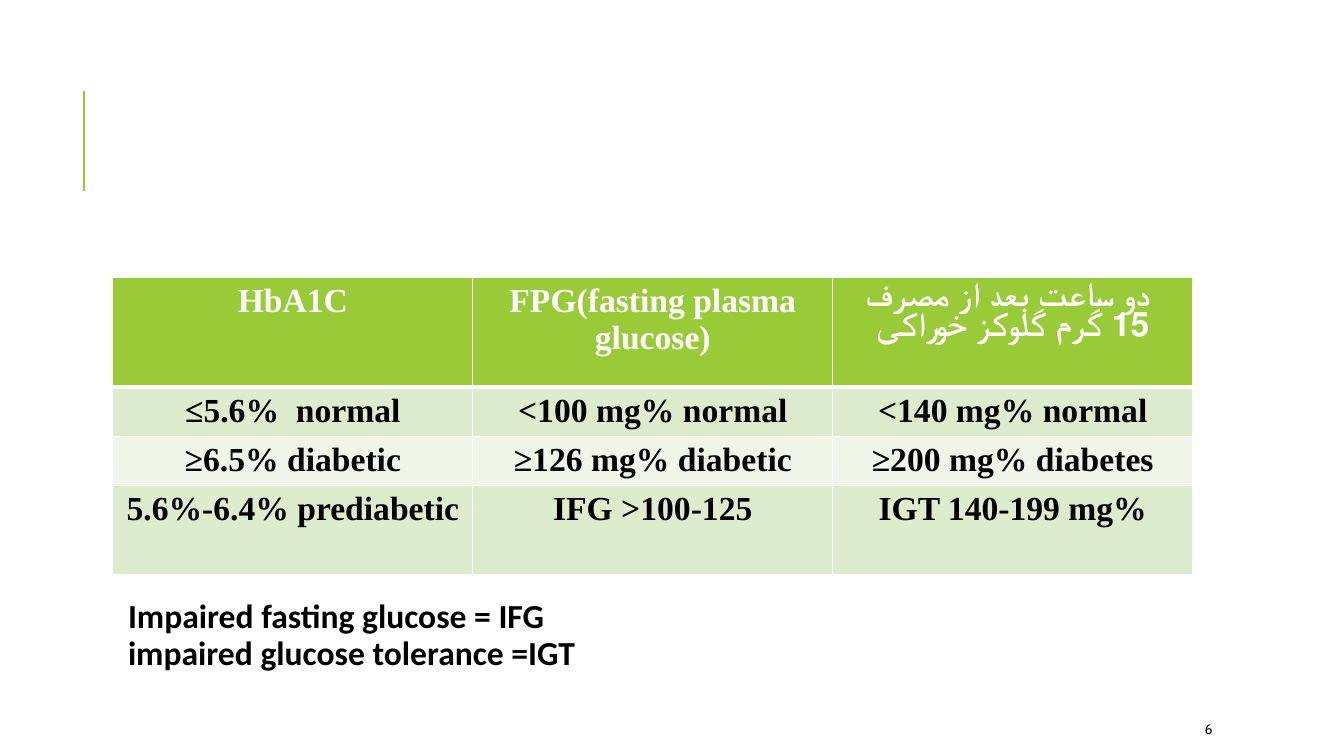
from dataclasses import dataclass

from lxml import etree
from pptx import Presentation
from pptx.dml.color import RGBColor
from pptx.enum.shapes import MSO_CONNECTOR
from pptx.enum.text import MSO_ANCHOR, MSO_AUTO_SIZE, PP_ALIGN
from pptx.oxml.ns import qn
from pptx.util import Inches, Pt

STRAIGHT = MSO_CONNECTOR.STRAIGHT
CENTER, LEFT = PP_ALIGN.CENTER, PP_ALIGN.LEFT
MIDDLE, BOTTOM = MSO_ANCHOR.MIDDLE, MSO_ANCHOR.BOTTOM
NO_FIT = MSO_AUTO_SIZE.NONE

WIDTH, HEIGHT = Inches(13.33), Inches(7.5)
GREEN, PALE, PALER = "99CB38", "DEECCE", "EFF6E8"
WHITE, BLACK, INK = "FFFFFF", "000000", "0D0D0D"
SERIF = "Times New Roman"
SLIDE_NUMBER = 6


@dataclass
class Area:
    """A rectangle in percent of the slide's width and height."""
    x: float
    y: float
    w: float
    h: float

    def emu(self) -> tuple[int, int, int, int]:
        return (int(WIDTH * self.x / 100), int(HEIGHT * self.y / 100),
                int(WIDTH * self.w / 100), int(HEIGHT * self.h / 100))


@dataclass
class Row:
    height: float  # percent of the slide's height
    fill: str
    color: str
    rule: float  # width of the bottom border in points
    cells: tuple[str, str, str]


RULE = Area(6.23, 12, 0, 13.33)
TABLE = Area(8.4, 36.67, 80.34, 36.53)
BODY = Area(8.4, 33.33, 79.74, 58.67)
NUMBER = Area(88.9, 94.4, 7.95, 4)

ROWS = [
    Row(14.53, GREEN, WHITE, 3, ("HbA1C", "FPG(fasting plasma glucose)",
                                 " دو ساعت بعد از مصرف 15 گرم گلوکز خوراکی")),
    Row(6.53, PALE, BLACK, 1, ("≤5.6%  normal", "<100 mg% normal", "<140 mg% normal")),
    Row(6.53, PALER, BLACK, 1, ("≥6.5% diabetic", "≥126 mg% diabetic", "≥200 mg% diabetes")),
    Row(11.73, PALE, BLACK, 1, ("5.6%-6.4% prediabetic", "IFG >100-125", "IGT 140-199 mg%")),
]
ABBREVIATIONS = "Impaired fasting glucose = IFG\vimpaired glucose tolerance =IGT"


def rgb(color: str) -> RGBColor:
    return RGBColor.from_string(color)


def write(tf, text: str, *, font: str, size: float, color: str,
          bold: bool = False, align=LEFT):
    """Fill the first paragraph of a text frame and return it."""
    tf.word_wrap = True
    p = tf.paragraphs[0]
    p.text = text
    p.alignment = align
    for r in p.runs:
        r.font.name, r.font.size, r.font.bold = font, Pt(size), bold
        r.font.color.rgb = rgb(color)
    return p


def set_border(cell, side: str, width: float) -> None:
    ln = etree.SubElement(cell._tc.get_or_add_tcPr(), qn(f"a:ln{side}"), w=str(Pt(width)))
    fill = etree.SubElement(ln, qn("a:solidFill"))
    etree.SubElement(fill, qn("a:srgbClr"), val=WHITE)


def add_rule(s) -> None:
    x, y, w, h = RULE.emu()
    line = s.shapes.add_connector(STRAIGHT, x, y + h, x + w, y)
    line.line.color.rgb = rgb(GREEN)
    line.line.width = Pt(1.5)
    etree.SubElement(line._element.spPr, qn("a:effectLst"))


def add_body(s) -> None:
    body = s.placeholders[1]
    body.left, body.top, body.width, body.height = BODY.emu()
    tf = body.text_frame
    tf.auto_size, tf.vertical_anchor = NO_FIT, BOTTOM
    tf.margin_left = tf.margin_right = tf.margin_top = Inches(0.05)
    tf.margin_bottom = Inches(0.23)
    p = write(tf, ABBREVIATIONS, font="Calibri", size=24, color=BLACK, bold=True)
    p.line_spacing, p.space_before, p.space_after = 0.9, Pt(0), Pt(0)
    pPr = p._p.get_or_add_pPr()
    pPr.set("marL", str(Inches(0.1)))
    pPr.set("indent", "0")
    etree.SubElement(pPr, qn("a:buNone"))


def add_criteria_table(s) -> None:
    table = s.shapes.add_table(len(ROWS), len(ROWS[0].cells), *TABLE.emu()).table
    for i, row in enumerate(ROWS):
        table.rows[i].height = int(HEIGHT * row.height / 100)
        for cell, text in zip(table.rows[i].cells, row.cells):
            for side in "LRT":
                set_border(cell, side, ROWS[i - 1].rule if side == "T" and i else 1)
            set_border(cell, "B", row.rule)
            cell.fill.solid()
            cell.fill.fore_color.rgb = rgb(row.fill)
            p = write(cell.text_frame, text, font=SERIF, size=24,
                      color=row.color, bold=True, align=CENTER)
            # Persian runs from right to left
            if any("\u0600" <= letter <= "\u06ff" for letter in text):
                p._p.get_or_add_pPr().set("rtl", "1")
                p.line_spacing = 0.9


def add_slide_number(s) -> None:
    tf = s.shapes.add_textbox(*NUMBER.emu()).text_frame
    tf.vertical_anchor = MIDDLE
    write(tf, str(SLIDE_NUMBER), font="Cabin", size=10, color=INK)


def main() -> None:
    prs = Presentation()
    prs.slide_width, prs.slide_height = WIDTH, HEIGHT
    s = prs.slides.add_slide(prs.slide_layouts[1])
    title = s.shapes.title._element
    title.getparent().remove(title)

    add_rule(s)
    add_body(s)
    add_criteria_table(s)
    add_slide_number(s)
    prs.save("out.pptx")


if __name__ == "__main__":
    main()
